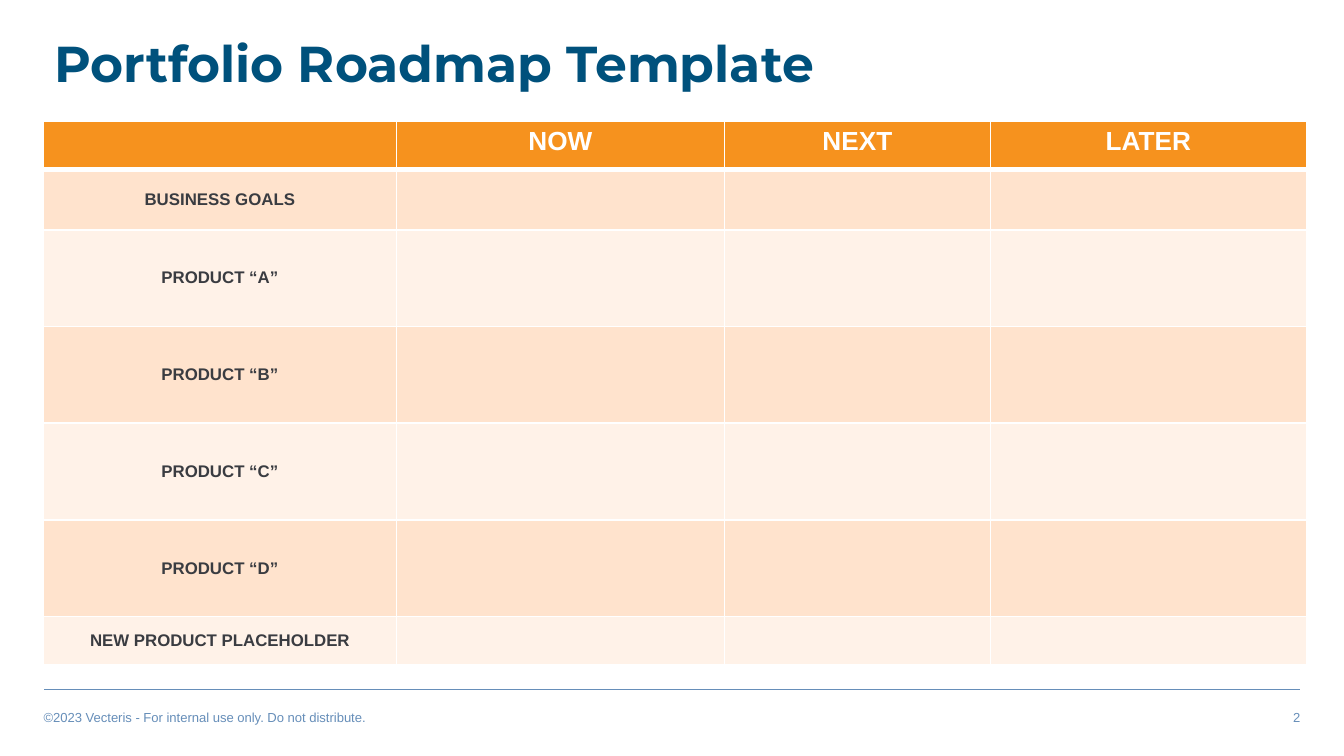
from lxml.etree import SubElement
from pptx import Presentation
from pptx.dml.color import RGBColor
from pptx.enum.shapes import MSO_CONNECTOR
from pptx.enum.text import MSO_ANCHOR, PP_ALIGN
from pptx.oxml.ns import qn
from pptx.util import Inches, Pt

TITLE = "Portfolio Roadmap Template"
COPYRIGHT = "©2023 Vecteris - For internal use only. Do not distribute."
PAGE_NUMBER = "2"
HORIZONS = ["", "NOW", "NEXT", "LATER"]
ROADMAP_ROWS = [  # label, row height
    ("BUSINESS GOALS", 0.45),
    ("PRODUCT “A”", 0.72),
    ("PRODUCT “B”", 0.72),
    ("PRODUCT “C”", 0.72),
    ("PRODUCT “D”", 0.72),
    ("NEW PRODUCT PLACEHOLDER", 0.36),
]
COLUMN_WIDTHS = [2.63, 2.44, 1.98, 2.35]
HEADER_HEIGHT = 0.36
TABLE_LEFT, TABLE_TOP = 0.32, 0.9

WHITE, ORANGE, STEEL = "FFFFFF", "F6921E", "668EB9"
BANDS = ["FFE3CD", "FFF2E8"]
TITLE_FORMAT = {"name": "Montserrat", "size": Pt(27), "bold": True, "color": "00517C"}
HEADER_FORMAT = {"name": "Arial", "size": Pt(14), "bold": True, "color": WHITE}
LABEL_FORMAT = {"name": "Arial", "size": Pt(9), "bold": True, "color": "3A3C41"}
FOOTER_FORMAT = {"name": "Arial", "size": Pt(7), "color": STEEL}


def paint(target, color):
    target.rgb = RGBColor.from_string(color)


def write(frame, text, style, align=PP_ALIGN.LEFT):
    paragraph = frame.paragraphs[0]
    paragraph.alignment = align
    run = paragraph.add_run()
    run.text = text
    for attribute, value in style.items():
        if attribute == "color":
            paint(run.font.color, value)
        else:
            setattr(run.font, attribute, value)


def set_frame(frame):
    frame.word_wrap = True
    frame.vertical_anchor = MSO_ANCHOR.TOP
    frame.margin_left = frame.margin_right = Pt(5.4)
    frame.margin_top = frame.margin_bottom = Pt(2.7)


def add_borders(cell, widths):
    """Draw white borders; must run before the cell's fill is set."""
    properties = cell._tc.get_or_add_tcPr()
    for side, width in widths.items():
        line = SubElement(properties, qn(f"a:ln{side}"), w=str(Pt(width)))
        fill = SubElement(line, qn("a:solidFill"))
        SubElement(fill, qn("a:srgbClr"), val=WHITE)


def add_title(slide):
    title = slide.shapes.title
    title.left, title.top, title.width, title.height = map(Inches, (0.33, 0.25, 6.39, 0.57))
    set_frame(title.text_frame)
    write(title.text_frame, TITLE, TITLE_FORMAT)
    title.text_frame.paragraphs[0].line_spacing = 0.9


def add_roadmap(slide):
    heights = [HEADER_HEIGHT] + [height for _, height in ROADMAP_ROWS]
    grid = [HORIZONS] + [[label, "", "", ""] for label, _ in ROADMAP_ROWS]
    table = slide.shapes.add_table(
        len(heights), len(COLUMN_WIDTHS), Inches(TABLE_LEFT), Inches(TABLE_TOP),
        Inches(sum(COLUMN_WIDTHS)), Inches(sum(heights))).table
    for column, width in zip(table.columns, COLUMN_WIDTHS):
        column.width = Inches(width)
    for row, height in zip(table.rows, heights):
        row.height = Inches(height)

    for r, texts in enumerate(grid):
        is_header = r == 0
        for c, text in enumerate(texts):
            cell = table.cell(r, c)
            add_borders(cell, {"L": 1, "R": 1, "T": 3 if r == 1 else 1,
                               "B": 3 if is_header else 1})
            cell.fill.solid()
            paint(cell.fill.fore_color, ORANGE if is_header else BANDS[(r - 1) % 2])
            cell.margin_left = cell.margin_right = Inches(0.08)
            cell.margin_top = cell.margin_bottom = Inches(0.04 if text else 0)
            cell.vertical_anchor = MSO_ANCHOR.TOP if is_header else MSO_ANCHOR.MIDDLE
            if text:
                write(cell.text_frame, text, HEADER_FORMAT if is_header else LABEL_FORMAT,
                      PP_ALIGN.CENTER)


def add_footer(slide):
    rule = slide.shapes.add_connector(
        MSO_CONNECTOR.STRAIGHT, Inches(0.33), Inches(5.13), Inches(9.67), Inches(5.13))
    paint(rule.line.color, STEEL)
    rule.line.width = Pt(1)
    SubElement(rule._element.spPr, qn("a:effectLst"))
    for left, text, align in [(0.25, COPYRIGHT, PP_ALIGN.LEFT),
                              (5.75, PAGE_NUMBER, PP_ALIGN.RIGHT)]:
        box = slide.shapes.add_textbox(Inches(left), Inches(5.24), Inches(4), Inches(0.19))
        set_frame(box.text_frame)
        write(box.text_frame, text, FOOTER_FORMAT, align)


def main():
    presentation = Presentation()
    presentation.slide_width = Inches(10)
    presentation.slide_height = presentation.slide_width * 9 // 16
    slide = presentation.slides.add_slide(presentation.slide_layouts[5])
    add_footer(slide)
    add_title(slide)
    add_roadmap(slide)
    presentation.save("out.pptx")


if __name__ == "__main__":
    main()
